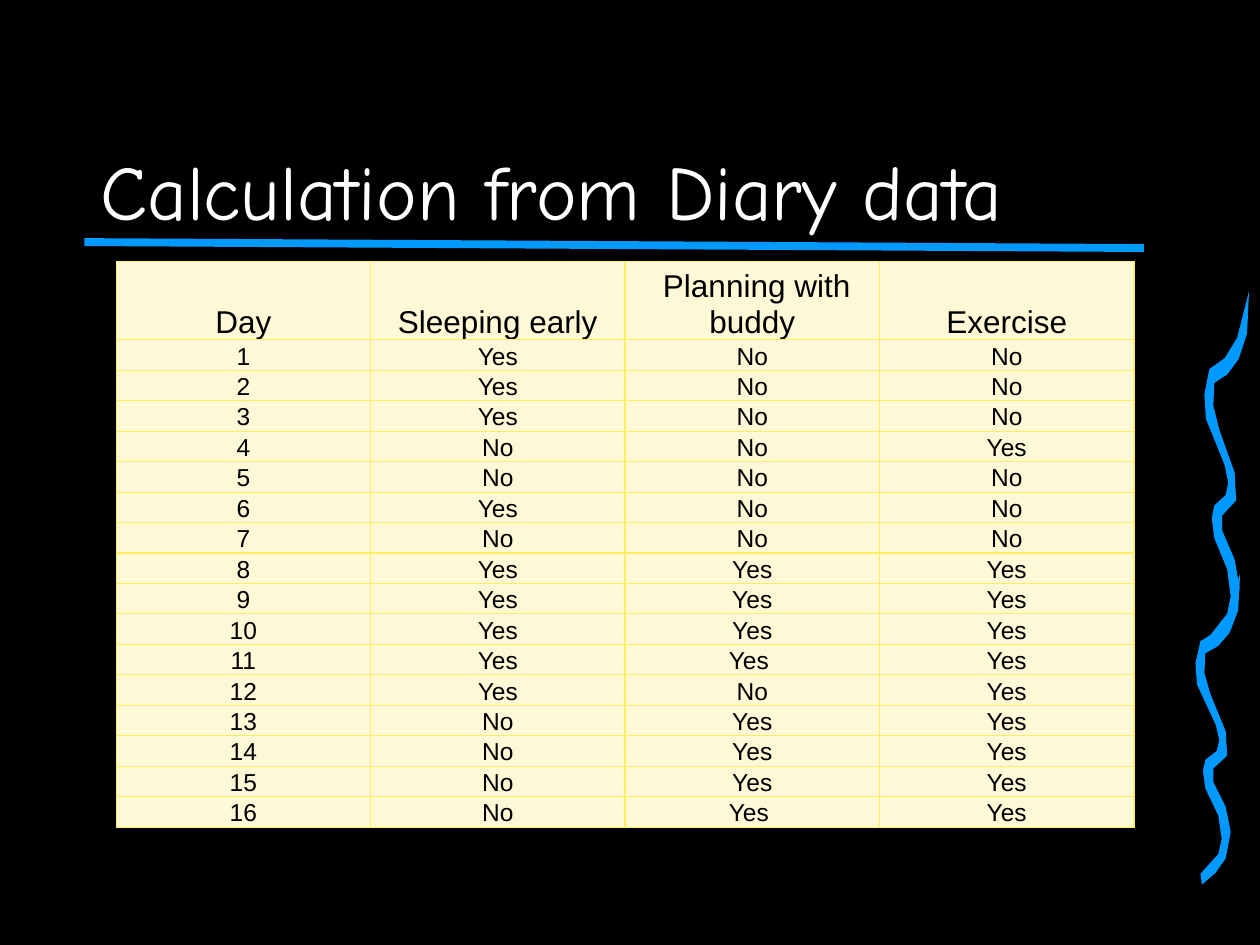
from dataclasses import dataclass

import pptx
import pptx.dml.color
import pptx.enum.shapes
import pptx.enum.text
import pptx.oxml.ns
import pptx.util
from lxml import etree

Cm = pptx.util.Cm
Pt = pptx.util.Pt


@dataclass(frozen=True)
class Theme:
    background: str = "000000"
    accent: str = "0099FF"
    title_text: str = "FFFFFF"
    cell_fill: str = "FFF8D7"
    cell_text: str = "000000"
    cell_border: str = "FDED60"
    title_font: str = "Comic Neue"
    table_font: str = "Arial"
    title_size: int = 44
    header_size: int = 18
    body_size: int = 14
    rule_width: float = 4.5
    border_width: float = 0.75


THEME = Theme()

HEADER = ("Day", "Sleeping early", " Planning with buddy", "Exercise")
DIARY = (
    ("Yes", "No", "No"),
    ("Yes", "No", "No"),
    ("Yes", "No", "No"),
    ("No", "No", "Yes"),
    ("No", "No", "No"),
    ("Yes", "No", "No"),
    ("No", "No", "No"),
    ("Yes", "Yes", "Yes"),
    ("Yes", "Yes", "Yes"),
    ("Yes", "Yes", "Yes"),
    ("Yes", "Yes ", "Yes"),
    ("Yes", "No", "Yes"),
    ("No", "Yes", "Yes"),
    ("No", "Yes", "Yes"),
    ("No", "Yes", "Yes"),
    ("No", "Yes ", "Yes"),
)

# Ribbon outline in centimetres from its top left corner
RIBBON = (
    (0.10, 6.96), (0.46, 6.50), (0.53, 6.15), (0.46, 5.61), (0.20, 4.98),
    (0.15, 4.57), (0.20, 4.32), (0.43, 4.11), (0.48, 3.86), (0.41, 3.51),
    (0.03, 2.57), (0, 2.08), (0.10, 1.57), (0.41, 1.35), (0.66, 0.94),
    (0.90, 0), (0.86, 0.86), (0.69, 1.37), (0.46, 1.68), (0.20, 1.85),
    (0.18, 2.31), (0.30, 2.79), (0.61, 3.66), (0.64, 4.22), (0.36, 4.52),
    (0.36, 4.83), (0.61, 5.41), (0.71, 5.99), (0.61, 6.60), (0.41, 6.93),
    (0.13, 7.21),
)


def color(value):
    return pptx.dml.color.RGBColor.from_string(value)


def format_paragraph(paragraph, font_name, size, text_color):
    paragraph.alignment = pptx.enum.text.PP_ALIGN.CENTER
    for run in paragraph.runs:
        run.font.name = font_name
        run.font.size = Pt(size)
        run.font.bold = False
        run.font.color.rgb = color(text_color)


def add_ribbon(slide, left, top, height_scale):
    points = [(Cm(left + x), Cm(top + y * height_scale)) for x, y in RIBBON]
    builder = slide.shapes.build_freeform(*points[0])
    builder.add_line_segments(points[1:], close=True)
    shape = builder.convert_to_shape()
    shape.shadow.inherit = False
    shape.fill.solid()
    shape.fill.fore_color.rgb = color(THEME.accent)
    shape.line.fill.background()


def add_rule(slide, start_x, start_y, end_x, end_y):
    connector = slide.shapes.add_connector(
        pptx.enum.shapes.MSO_CONNECTOR.STRAIGHT,
        Cm(start_x), Cm(start_y), Cm(end_x), Cm(end_y))
    connector.line.color.rgb = color(THEME.accent)
    connector.line.width = Pt(THEME.rule_width)
    etree.SubElement(connector.element.spPr, pptx.oxml.ns.qn("a:effectLst"))


def add_title(slide, text, left, top, width, height):
    text_frame = slide.shapes.add_textbox(
        Cm(left), Cm(top), Cm(width), Cm(height)).text_frame
    text_frame.word_wrap = True
    text_frame.vertical_anchor = pptx.enum.text.MSO_ANCHOR.BOTTOM
    text_frame.text = text
    format_paragraph(text_frame.paragraphs[0], THEME.title_font,
                     THEME.title_size, THEME.title_text)


def add_cell_borders(cell):
    qn = pptx.oxml.ns.qn
    properties = cell._tc.get_or_add_tcPr()
    for side in ("a:lnL", "a:lnR", "a:lnT", "a:lnB"):
        line = etree.SubElement(properties, qn(side),
                                w=str(Pt(THEME.border_width)))
        fill = etree.SubElement(line, qn("a:solidFill"))
        etree.SubElement(fill, qn("a:srgbClr"), val=THEME.cell_border)


def format_cell(cell, text, size):
    cell.text_frame.text = text
    cell.vertical_anchor = pptx.enum.text.MSO_ANCHOR.BOTTOM
    cell.margin_left = cell.margin_right = cell.margin_top = Cm(0.02)
    cell.margin_bottom = 0
    add_cell_borders(cell)
    cell.fill.solid()
    cell.fill.fore_color.rgb = color(THEME.cell_fill)
    format_paragraph(cell.text_frame.paragraphs[0], THEME.table_font,
                     size, THEME.cell_text)


def add_diary_table(slide, left, top, column_width, header_height, row_height):
    rows = [HEADER] + [(str(day), *answers)
                       for day, answers in enumerate(DIARY, start=1)]
    table = slide.shapes.add_table(
        len(rows), len(HEADER), Cm(left), Cm(top),
        Cm(column_width * len(HEADER)),
        Cm(header_height + row_height * len(DIARY))).table
    table.first_row = False
    table.horz_banding = False
    for column in table.columns:
        column.width = Cm(column_width)
    for row_index, values in enumerate(rows):
        is_header = row_index == 0
        table.rows[row_index].height = Cm(header_height if is_header else row_height)
        size = THEME.header_size if is_header else THEME.body_size
        for column_index, text in enumerate(values):
            format_cell(table.cell(row_index, column_index), text, size)


def main():
    presentation = pptx.Presentation()
    presentation.slide_width = Cm(25.4)
    presentation.slide_height = Cm(19.05)
    slide = presentation.slides.add_slide(presentation.slide_layouts[6])
    slide.background.fill.solid()
    slide.background.fill.fore_color.rgb = color(THEME.background)

    # Decorative ribbons and title rule
    add_ribbon(slide, 24.10, 11.56, 0.87)
    add_ribbon(slide, 24.28, 5.87, 1)
    add_rule(slide, 1.70, 4.88, 23.06, 5.00)

    # Title and diary
    add_title(slide, "Calculation from Diary data", 1.70, 0, 18.85, 4.88)
    add_diary_table(slide, 2.34, 5.28, 5.13, 1.57, 0.53)

    presentation.save("out.pptx")


if __name__ == "__main__":
    main()
